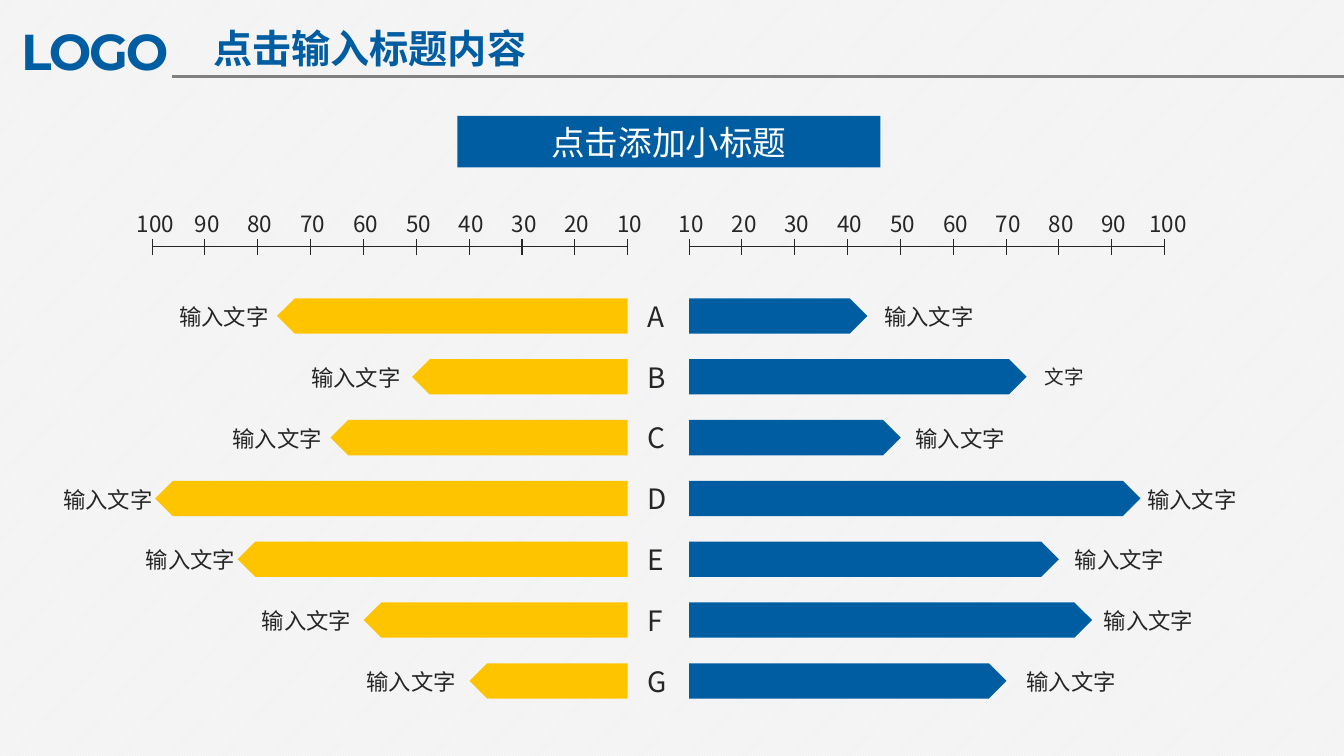
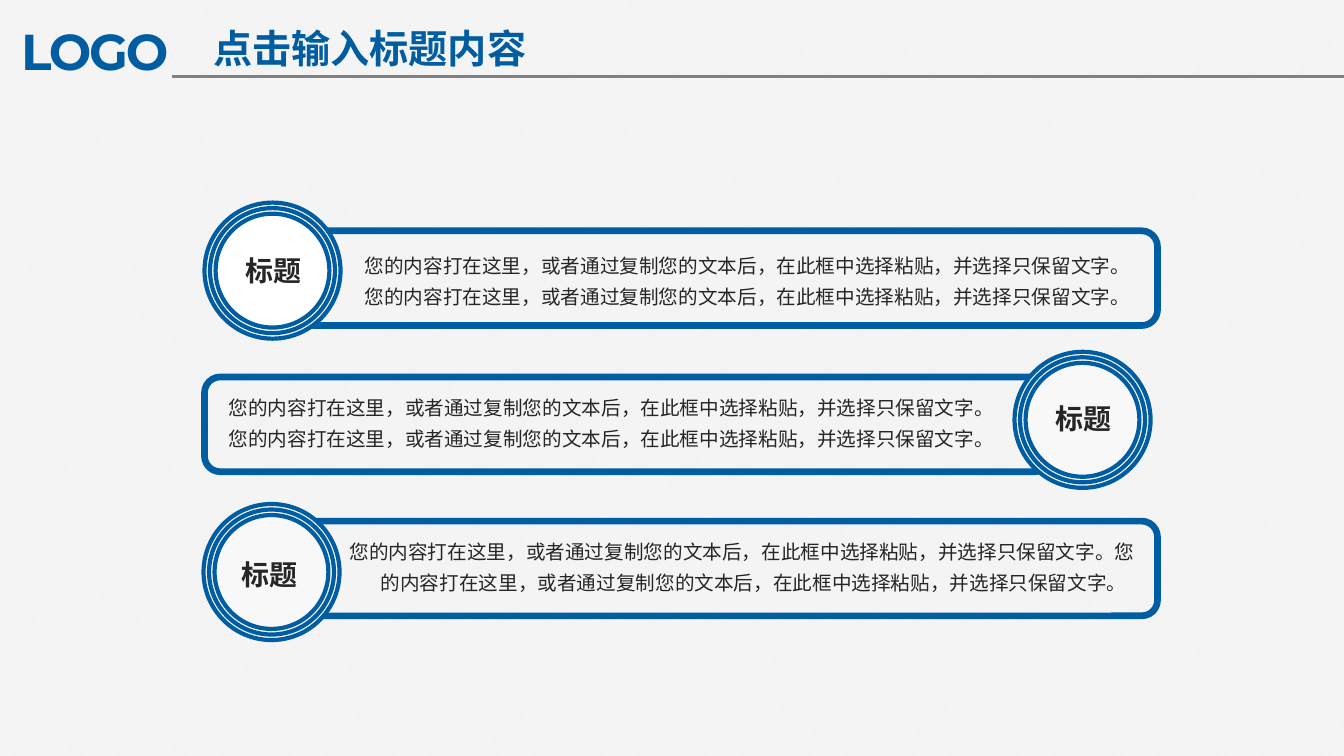
from lxml import etree
from pptx import Presentation
from pptx.dml.color import RGBColor
from pptx.enum.dml import MSO_PATTERN
from pptx.enum.shapes import MSO_CONNECTOR, MSO_SHAPE
from pptx.enum.text import MSO_ANCHOR, MSO_AUTO_SIZE, PP_ALIGN
from pptx.oxml.ns import qn
from pptx.util import Inches, Pt

BLUE = RGBColor(0x00, 0x5D, 0xA2)
YELLOW = RGBColor(0xFF, 0xC4, 0x00)
DARK = RGBColor(0x26, 0x26, 0x26)
GREY = RGBColor(0x80, 0x80, 0x80)
WHITE = RGBColor(0xFF, 0xFF, 0xFF)
NEAR_WHITE = RGBColor(0xF8, 0xF8, 0xF8)
PAPER = RGBColor(0xF2, 0xF2, 0xF2)

STRAIGHT = MSO_CONNECTOR.STRAIGHT
PENTAGON = MSO_SHAPE.PENTAGON
RECTANGLE = MSO_SHAPE.RECTANGLE
ROUNDED = MSO_SHAPE.ROUNDED_RECTANGLE
OVAL = MSO_SHAPE.OVAL
CENTER = PP_ALIGN.CENTER
MIDDLE = MSO_ANCHOR.MIDDLE
GROW = MSO_AUTO_SIZE.SHAPE_TO_FIT_TEXT
DIAGONAL = MSO_PATTERN.LIGHT_UPWARD_DIAGONAL

BODY_FONT = "Noto Sans CJK SC"
LOGO_STYLE = {"name": "Montserrat", "size": Pt(36), "bold": True}
TITLE_STYLE = {"name": BODY_FONT, "size": Pt(28), "bold": True}
SUBTITLE_STYLE = {"name": BODY_FONT, "size": Pt(24)}
LETTER_STYLE = {"name": BODY_FONT, "size": Pt(20)}
BADGE_STYLE = {"name": BODY_FONT, "size": Pt(20), "bold": True}
LABEL_STYLE = {"name": BODY_FONT, "size": Pt(16)}
SMALL_STYLE = {"name": BODY_FONT, "size": Pt(14)}

TITLE = "点击输入标题内容"
SUBTITLE = "点击添加小标题"
LABEL = "输入文字"
SHORT_LABEL = "文字"
BADGE = "标题"
SENTENCE = "您的内容打在这里，或者通过复制您的文本后，在此框中选择粘贴，并选择只保留文字。"

BAR_ROWS = [
    ("A", 3.48, 1.68, 1.77, 8.68, LABEL),
    ("B", 2.14, 2.99, 3.35, 10.27, SHORT_LABEL),
    ("C", 2.95, 2.21, 2.10, 8.99, LABEL),
    ("D", 4.69, 0.53, 4.48, 11.29, LABEL),
    ("E", 3.87, 1.35, 3.67, 10.57, LABEL),
    ("F", 2.62, 2.50, 4.00, 10.86, LABEL),
    ("G", 1.57, 3.54, 3.15, 10.09, LABEL),
]
SCALE = range(10, 101, 10)
LEFT_BASE, RIGHT_BASE = 6.23, 6.84
AXIS_LENGTH, AXIS_TOP = 4.72, 2.45
FIRST_ROW, LAST_ROW, BAR_HEIGHT = 2.96, 6.58, 0.35

PANELS = [
    {"frame": (2.96, 2.29, 8.53, 0.94), "badge": (2.03, 2.01), "middle_ring": WHITE,
     "heading": (2.05, 2.47, 1.33, 0.44), "align": CENTER,
     "body": (3.52, 2.40, 7.82, 0.68), "hanging": 0},
    {"frame": (2.03, 3.74, 8.40, 0.94), "badge": (10.07, 3.49), "middle_ring": None,
     "heading": (10.38, 3.93, 1.09, 0.44), "align": None,
     "body": (2.17, 3.81, 7.84, 0.98), "hanging": 0},
    {"frame": (2.96, 5.17, 8.53, 0.94), "badge": (2.02, 5.00), "middle_ring": None,
     "heading": (2.30, 5.48, 1.25, 0.44), "align": None,
     "body": (3.37, 5.24, 8.11, 0.68), "hanging": 0.31},
]
BADGE_SIZE, RING_GAP = 1.35, 0.055


def inches(values):
    return [Inches(value) for value in values]


def write(shape, text, style, color, align=None):
    paragraph = shape.text_frame.paragraphs[0]
    paragraph.alignment = align
    run = paragraph.add_run()
    run.text = text
    for name, value in style.items():
        setattr(run.font, name, value)
    run.font.color.rgb = color
    properties = run._r.get_or_add_rPr()
    etree.SubElement(properties, qn("a:ea")).set("typeface", style["name"])
    return paragraph


def add_text(shapes, box, text, style, color=DARK, align=None, wrap=True):
    shape = shapes.add_textbox(*inches(box))
    shape.text_frame.word_wrap = wrap
    shape.text_frame.auto_size = GROW
    write(shape, text, style, color, align)
    return shape


def add_line(shapes, ends, color, width):
    line = shapes.add_connector(STRAIGHT, *inches(ends))
    line.line.color.rgb = color
    line.line.width = Pt(width)
    etree.SubElement(line._element.spPr, qn("a:effectLst"))


def add_shape(shapes, kind, box, fill=None, outline=None, width=0):
    shape = shapes.add_shape(kind, *inches(box))
    shape.shadow.inherit = False
    if fill is None:
        shape.fill.background()
    else:
        shape.fill.solid()
        shape.fill.fore_color.rgb = fill
    if outline is None:
        shape.line.fill.background()
    else:
        shape.line.color.rgb = outline
        shape.line.width = Pt(width)
    return shape


def set_background(master):
    fill = master.background.fill
    fill.patterned()
    fill.pattern = DIAGONAL
    fill.fore_color.rgb = WHITE
    fill.back_color.rgb = PAPER


def add_slide(presentation):
    shapes = presentation.slides.add_slide(presentation.slide_layouts[6]).shapes
    logo = add_text(shapes, (0.08, 0.13, 1.86, 0.74), "LOGO", LOGO_STYLE, BLUE)
    frame = logo.text_frame
    frame.margin_left = frame.margin_right = Inches(0.13)
    frame.margin_top = frame.margin_bottom = Inches(0.07)
    frame.paragraphs[0].runs[0]._r.get_or_add_rPr().set("spc", "-150")
    add_line(shapes, (1.71, 0.76, 13.34, 0.76), GREY, 2)
    add_text(shapes, (1.87, 0.19, 3.6, 0.57), TITLE, TITLE_STYLE, BLUE, CENTER)
    return shapes


def add_axis(shapes, base, direction):
    axis = shapes.add_group_shape().shapes
    ends = sorted((base, base + direction * AXIS_LENGTH))
    add_line(axis, (ends[0], AXIS_TOP, ends[1], AXIS_TOP), DARK, 0.75)
    step = direction * AXIS_LENGTH / (len(SCALE) - 1)
    for index, value in enumerate(SCALE):
        tick = base + index * step
        add_line(axis, (tick, AXIS_TOP + 0.08, tick, AXIS_TOP - 0.08), DARK, 0.75)
        width, offset = (0.6, 0.25) if value == 100 else (0.46, 0.2)
        add_text(shapes, (tick - offset, 2.04, width, 0.37), str(value), LABEL_STYLE, wrap=False)


def build_bars(shapes):
    subtitle = add_shape(shapes, RECTANGLE, (4.54, 1.15, 4.2, 0.51), BLUE)
    subtitle.text_frame.vertical_anchor = MIDDLE
    write(subtitle, SUBTITLE, SUBTITLE_STYLE, WHITE, CENTER)
    add_axis(shapes, LEFT_BASE, -1)
    add_axis(shapes, RIGHT_BASE, 1)
    step = (LAST_ROW - FIRST_ROW) / (len(BAR_ROWS) - 1)
    for index, row in enumerate(BAR_ROWS):
        letter, left_width, left_label, right_width, right_label, right_text = row
        top = FIRST_ROW + index * step
        left_bar = add_shape(shapes, PENTAGON, (LEFT_BASE - left_width, top, left_width, BAR_HEIGHT), YELLOW)
        left_bar._element.spPr.get_or_add_xfrm().set("flipH", "1")
        add_shape(shapes, PENTAGON, (RIGHT_BASE, top, right_width, BAR_HEIGHT), BLUE)
        add_text(shapes, (left_label, top, 1.1, 0.37), LABEL, LABEL_STYLE, wrap=False)
        if right_text == SHORT_LABEL:
            add_text(shapes, (right_label, top + 0.01, 0.59, 0.34), right_text, SMALL_STYLE, wrap=False)
        else:
            add_text(shapes, (right_label, top, 1.1, 0.37), right_text, LABEL_STYLE, wrap=False)
        add_text(shapes, (6.33, top - 0.04, 0.4, 0.44), letter, LETTER_STYLE, wrap=False)


def build_panels(shapes):
    for panel in PANELS:
        add_shape(shapes, ROUNDED, panel["frame"], None, BLUE, 4.75)
        badge = shapes.add_group_shape().shapes
        left, top = panel["badge"]
        for ring, fill in enumerate((NEAR_WHITE, panel["middle_ring"], None)):
            inset = ring * RING_GAP
            size = BADGE_SIZE - 2 * inset
            add_shape(badge, OVAL, (left + inset, top + inset, size, size), fill, BLUE, 3)
        add_text(shapes, panel["heading"], BADGE, BADGE_STYLE, align=panel["align"])
        body = add_text(shapes, panel["body"], SENTENCE * 2, SMALL_STYLE)
        paragraph = body.text_frame.paragraphs[0]
        paragraph.line_spacing = 1.3
        if panel["hanging"]:
            properties = paragraph._p.get_or_add_pPr()
            properties.set("marL", str(Inches(panel["hanging"])))
            properties.set("indent", str(-Inches(panel["hanging"])))


def main():
    presentation = Presentation()
    presentation.slide_width = Inches(13.34)
    presentation.slide_height = Inches(7.5)
    set_background(presentation.slide_master)
    build_bars(add_slide(presentation))
    build_panels(add_slide(presentation))
    presentation.save("out.pptx")


if __name__ == "__main__":
    main()
